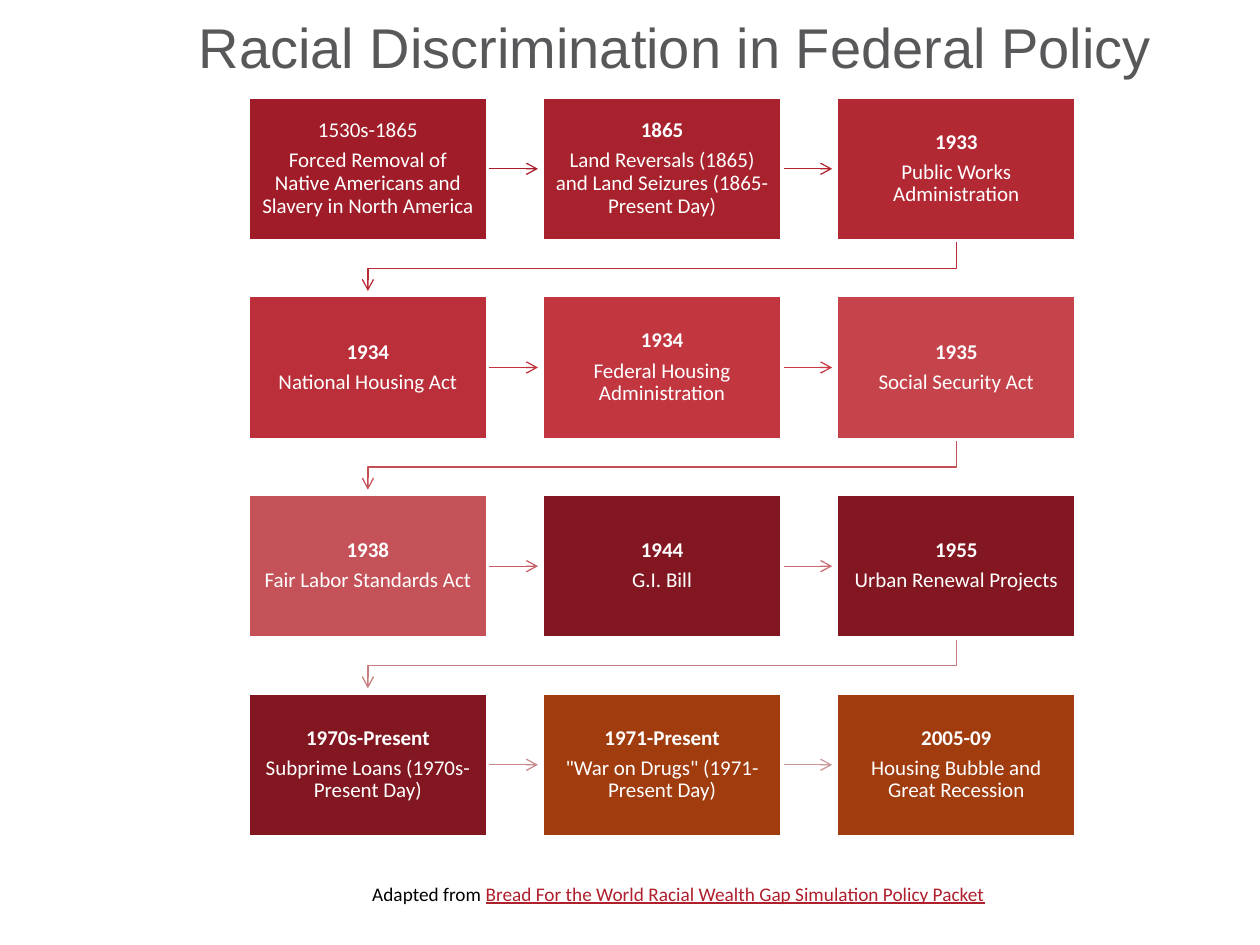
from typing import NamedTuple

import pptx
import pptx.dml.color
import pptx.enum.shapes
import pptx.enum.text
import pptx.oxml.ns
import pptx.util
from lxml import etree

RGBColor = pptx.dml.color.RGBColor
Inches = pptx.util.Inches
Pt = pptx.util.Pt
Align = pptx.enum.text.PP_ALIGN
Anchor = pptx.enum.text.MSO_ANCHOR
qn = pptx.oxml.ns.qn

WHITE = RGBColor(0xFF, 0xFF, 0xFF)
BLACK = RGBColor(0x00, 0x00, 0x00)
GRAY = RGBColor(0x58, 0x58, 0x5B)
LINK = RGBColor(0xAF, 0x1F, 0x2C)
WINE = RGBColor(0x83, 0x17, 0x21)
RUST = RGBColor(0xA1, 0x3C, 0x0F)
REDS = [RGBColor.from_string(code) for code in (
    "9F1C28", "A8222D", "B22833", "BA2F39", "C23640", "C5434B", "C55259")]
FILLS = REDS + [WINE] * 3 + [RUST] * 2
LINES = [RGBColor.from_string(code) for code in (
    "A71E2A", "B12430", "BA2B36", "C2323D", "C73D46", "C64E55",
    "C65E64", "C76D72", "C87C7F", "C98A8D", "CB989A")]

# Grid of boxes, in inches
COLS = 3
LEFT, TOP = 1.97, 0.77
WIDE, HIGH = 1.9, 1.14
STEP_X = (6.64 - LEFT) / 2
STEP_Y = (5.5 - TOP) / 3
GAP = 0.4
BEND = 0.22


class Step(NamedTuple):
    date: str
    name: str
    bold: bool = True


STEPS = [
    Step("1530s-1865", "Forced Removal of Native Americans and Slavery in North America", False),
    Step("1865", "Land Reversals (1865) and Land Seizures (1865-Present Day)"),
    Step("1933", "Public Works Administration"),
    Step("1934", "National Housing Act"),
    Step("1934", "Federal Housing Administration"),
    Step("1935", "Social Security Act"),
    Step("1938", "Fair Labor Standards Act"),
    Step("1944", "G.I. Bill"),
    Step("1955", "Urban Renewal Projects"),
    Step("1970s-Present", "Subprime Loans (1970s-Present Day)"),
    Step("1971-Present", '"War on Drugs" (1971-Present Day)'),
    Step("2005-09", "Housing Bubble and Great Recession"),
]


def write(para, text: str, *, size: float, color: RGBColor, font: str = "Calibri",
          bold: bool = False, under: bool = False, after: float = 0,
          space: float = 1.0) -> None:
    """Add a run of text to a centred paragraph."""
    para.alignment = Align.CENTER
    para.space_before, para.space_after = Pt(0), Pt(after)
    para.line_spacing = space
    run = para.add_run()
    run.text = text
    run.font.name, run.font.size = font, Pt(size)
    run.font.bold, run.font.underline = bold, under
    run.font.color.rgb = color


def spot(index: int) -> tuple[float, float]:
    """Left and top of a box in the grid."""
    row, col = divmod(index, COLS)
    return LEFT + col * STEP_X, TOP + row * STEP_Y


def style(line, color: RGBColor) -> None:
    """Give a line its colour, width and arrowhead."""
    line.line.color.rgb = color
    line.line.width = Pt(0.75)
    tail = etree.SubElement(line.line._get_or_add_ln(), qn("a:tailEnd"))
    tail.set("type", "arrow")


def arrow(slide, index: int, color: RGBColor) -> None:
    """Link a box to the next one, across or down to a new row."""
    x, y = spot(index)
    if (index + 1) % COLS:
        mid = Inches(y + HIGH / 2)
        line = slide.shapes.add_connector(
            pptx.enum.shapes.MSO_CONNECTOR.STRAIGHT,
            Inches(x + WIDE), mid, Inches(x + WIDE + GAP), mid)
        etree.SubElement(line._element.spPr, qn("a:effectLst"))
        style(line, color)
        return
    start, end = x + WIDE / 2, LEFT + WIDE / 2
    base = y + HIGH
    path = [(start, base + BEND), (end, base + BEND), (end, base + GAP)]
    form = slide.shapes.build_freeform(Inches(start), Inches(base))
    form.add_line_segments([(Inches(a), Inches(b)) for a, b in path], close=False)
    line = form.convert_to_shape()
    line.shadow.inherit = False
    line.fill.background()
    style(line, color)


def box(slide, index: int, step: Step, fill: RGBColor) -> None:
    """Draw one policy box with its date and name."""
    x, y = spot(index)
    shape = slide.shapes.add_shape(
        pptx.enum.shapes.MSO_SHAPE.RECTANGLE,
        Inches(x), Inches(y), Inches(WIDE), Inches(HIGH))
    shape.shadow.inherit = False
    shape.fill.solid()
    shape.fill.fore_color.rgb = fill
    shape.line.color.rgb = WHITE
    shape.line.width = Pt(2)
    frame = shape.text_frame
    frame.word_wrap = True
    frame.vertical_anchor = Anchor.MIDDLE
    frame.margin_left = frame.margin_right = Inches(0.09)
    frame.margin_top = frame.margin_bottom = Inches(0.09)
    form = dict(size=12, color=WHITE, after=4.2, space=0.9)
    write(frame.paragraphs[0], step.date, bold=step.bold, **form)
    write(frame.add_paragraph(), step.name, **form)


def main() -> None:
    deck = pptx.Presentation()
    deck.slide_width, deck.slide_height = Inches(10), Inches(7.5)
    slide = deck.slides.add_slide(deck.slide_layouts[5])

    # Title
    title = slide.shapes.title
    title.left, title.top = Inches(0.86), Inches(0.05)
    title.width, title.height = Inches(9), Inches(0.63)
    title.text_frame.vertical_anchor = Anchor.MIDDLE
    write(title.text_frame.paragraphs[0], "Racial Discrimination in Federal Policy",
          size=32, color=GRAY, font="Arial")

    # Timeline, with each arrow behind its box
    for index, (step, fill) in enumerate(zip(STEPS, FILLS)):
        if index < len(LINES):
            arrow(slide, index, LINES[index])
        box(slide, index, step, fill)

    # Source note
    note = slide.shapes.add_textbox(
        Inches(2.66), Inches(6.97), Inches(5.45), Inches(0.27))
    note.text_frame.word_wrap = True
    para = note.text_frame.paragraphs[0]
    form = dict(size=11, after=2, space=0.9)
    write(para, "Adapted from ", color=BLACK, **form)
    write(para, "Bread For the World Racial Wealth Gap Simulation Policy Packet",
          color=LINK, under=True, **form)

    deck.save("out.pptx")


if __name__ == "__main__":
    main()
